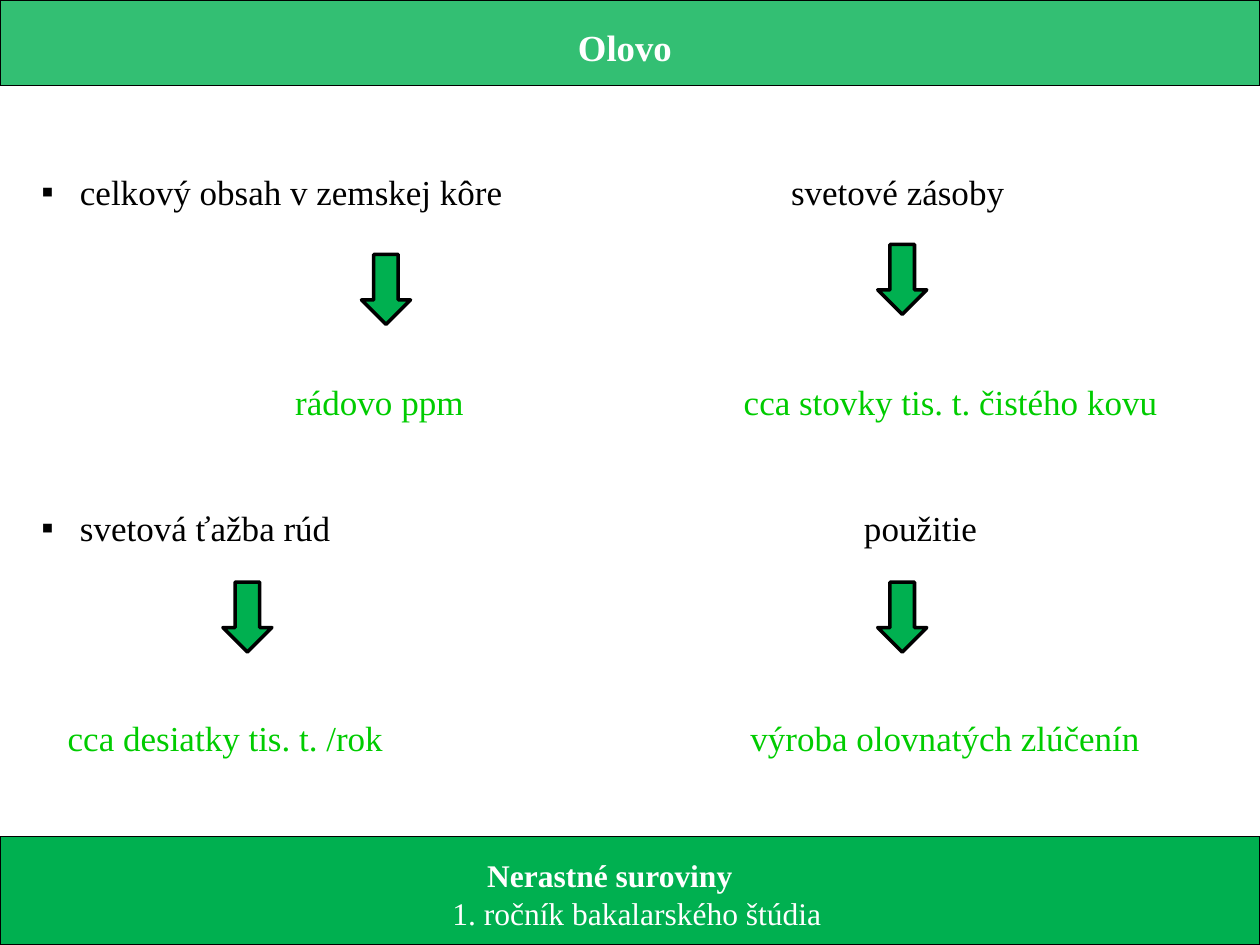
from lxml.etree import SubElement
from pptx import Presentation
from pptx.dml.color import RGBColor
from pptx.enum.shapes import MSO_SHAPE as Preset
from pptx.enum.text import MSO_ANCHOR as Anchor, MSO_AUTO_SIZE as AutoSize, PP_ALIGN as Align
from pptx.oxml.ns import qn
from pptx.util import Pt

THEME = {
    "font": "Times New Roman",
    "bar": "00B050",
    "outline": "000000",
    "on_bar": "FFFFFF",
    "topic": "000000",
    "answer": "00CC00",
    "title_size": 21,
    "body_size": 20,
    "footer_size": 18,
}

TITLE = "Olovo"
FOOTER = [
    # text, bold, left margin, right margin
    ("Nerastné suroviny", True, 0, 23),
    ("1. ročník bakalarského štúdia", False, 8, 0),
]
# Each column: box left, box width, then (topic, indent, answer, indent) per row
COLUMNS = [
    (16.5, 370, True, [
        ("celkový obsah v zemskej kôre", 22, "rádovo ppm", 145),
        ("svetová ťažba rúd", 22, "cca desiatky tis. t. /rok", 15),
    ]),
    (410, 284, False, [
        ("svetové zásoby", 34.8, "cca stovky tis. t. čistého kovu", 7.8),
        ("použitie", 76.5, "výroba olovnatých zlúčenín", 11.6),
    ]),
]
ARROWS = [(206.6, 145.4), (501.6, 139.6), (127.4, 332.6), (501.6, 332.6)]

SLIDE_WIDTH, SLIDE_HEIGHT = 720, 540
TITLE_HEIGHT, FOOTER_HEIGHT = 49, 62
BODY_TOP, BODY_HEIGHT, LINE = 93.8, 348, 24
ARROW_SIZE = (28, 40)


def place(shape, left, top, width, height):
    shape.left, shape.top, shape.width, shape.height = map(Pt, (left, top, width, height))


def paint(shape, line_width, alpha=None):
    """Give the shape the green fill and black outline."""
    shape.fill.solid()
    shape.fill.fore_color.rgb = RGBColor.from_string(THEME["bar"])
    if alpha is not None:
        color = shape._element.spPr.find(qn("a:solidFill"))[0]
        SubElement(color, qn("a:alpha"), val=str(alpha * 1000))
    shape.line.color.rgb = RGBColor.from_string(THEME["outline"])
    shape.line.width = Pt(line_width)


def set_frame(frame, anchor, top=3.6, right=7.2):
    frame.word_wrap = True
    frame.auto_size = AutoSize.NONE
    frame.vertical_anchor = anchor
    frame.margin_left, frame.margin_right = Pt(7.2), Pt(right)
    frame.margin_top, frame.margin_bottom = Pt(top), Pt(3.6)


def write(frame, text, *, size, color, bold=False, align=Align.LEFT, before=0,
          line=None, left=0, right=0, bullet=False):
    """Add one paragraph, using the empty first one when it is free."""
    paragraph = frame.paragraphs[0]
    if paragraph.runs:
        paragraph = frame.add_paragraph()
    paragraph.alignment = align
    paragraph.space_before, paragraph.space_after = Pt(before), Pt(0)
    if line:
        paragraph.line_spacing = Pt(line)
    properties = paragraph._p.get_or_add_pPr()
    properties.set("marL", str(Pt(left)))
    properties.set("marR", str(Pt(right)))
    properties.set("indent", str(Pt(-left if bullet else 0)))
    if bullet:
        SubElement(properties, qn("a:buFont"), typeface=THEME["font"])
        SubElement(properties, qn("a:buChar"), char="▪")
    else:
        SubElement(properties, qn("a:buNone"))
    run = paragraph.add_run()
    run.text = text
    run.font.name, run.font.size, run.font.bold = THEME["font"], Pt(size), bold
    run.font.color.rgb = RGBColor.from_string(color)


def add_title(slide):
    title = slide.shapes.title
    place(title, 0, 0, SLIDE_WIDTH, TITLE_HEIGHT)
    paint(title, 0.75, alpha=80)
    set_frame(title.text_frame, Anchor.MIDDLE, top=8, right=13)
    write(title.text_frame, TITLE, size=THEME["title_size"], color=THEME["on_bar"],
          bold=True, align=Align.CENTER)


def add_footer(slide):
    footer = slide.shapes.add_shape(Preset.RECTANGLE, 0, 0, 0, 0)
    place(footer, 0, SLIDE_HEIGHT - FOOTER_HEIGHT, SLIDE_WIDTH, FOOTER_HEIGHT)
    footer.shadow.inherit = False
    paint(footer, 0.75)
    set_frame(footer.text_frame, Anchor.MIDDLE, top=7)
    for text, bold, left, right in FOOTER:
        write(footer.text_frame, text, size=THEME["footer_size"], color=THEME["on_bar"],
              bold=bold, align=Align.CENTER, line=21.7, left=left, right=right)


def add_column(body, left, width, bullet, rows):
    place(body, left, BODY_TOP, width, BODY_HEIGHT)
    frame = body.text_frame
    set_frame(frame, Anchor.TOP)
    for index, (topic, topic_indent, answer, answer_indent) in enumerate(rows):
        write(frame, topic, size=THEME["body_size"], color=THEME["topic"], line=LINE,
              before=2 * LINE if index else 0, left=topic_indent, bullet=bullet)
        write(frame, answer, size=THEME["body_size"], color=THEME["answer"], line=LINE,
              before=4 * LINE, left=answer_indent)


def add_arrow(slide, left, top):
    arrow = slide.shapes.add_shape(Preset.DOWN_ARROW, 0, 0, 0, 0)
    place(arrow, left, top, *ARROW_SIZE)
    arrow.shadow.inherit = False
    paint(arrow, 2)


def main():
    presentation = Presentation()
    presentation.slide_width, presentation.slide_height = Pt(SLIDE_WIDTH), Pt(SLIDE_HEIGHT)
    two_content = presentation.slide_layouts[3]
    slide = presentation.slides.add_slide(two_content)
    add_title(slide)
    add_footer(slide)
    for index, column in enumerate(COLUMNS, start=1):
        add_column(slide.placeholders[index], *column)
    for left, top in ARROWS:
        add_arrow(slide, left, top)
    presentation.save("out.pptx")


if __name__ == "__main__":
    main()
